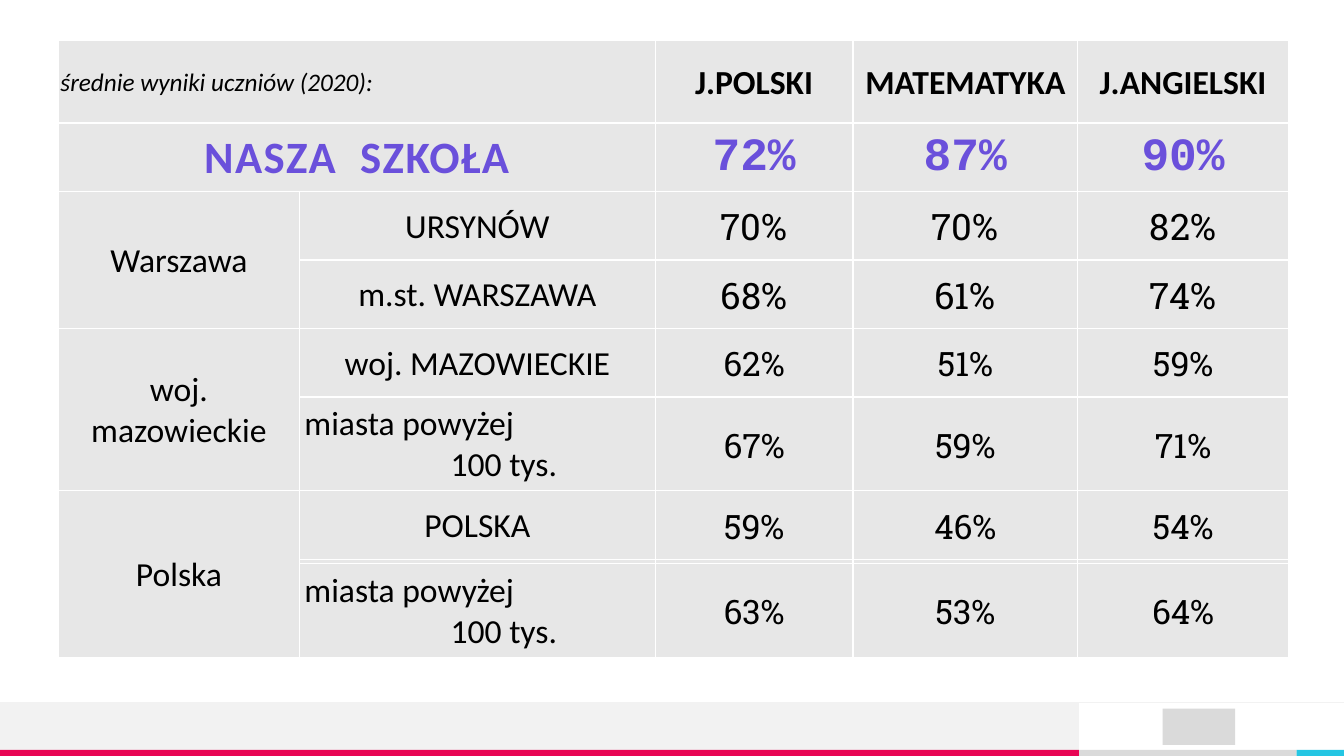
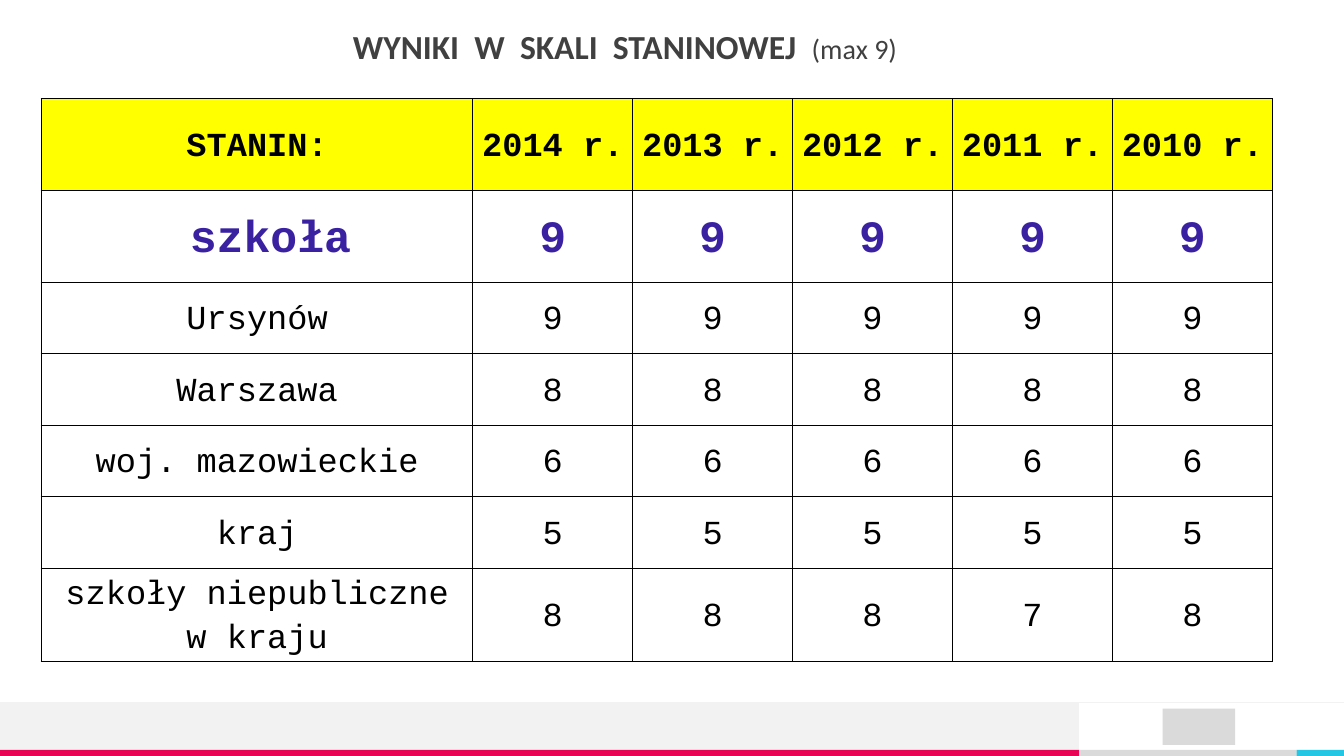
from dataclasses import dataclass

from lxml.etree import SubElement
from pptx import Presentation
from pptx.dml.color import RGBColor
from pptx.enum.shapes import MSO_CONNECTOR as CONN, MSO_SHAPE as SHAPE
from pptx.enum.text import MSO_ANCHOR as ANCHOR, PP_ALIGN as ALIGN
from pptx.oxml.ns import qn
from pptx.util import Inches, Pt


@dataclass(frozen=True)
class Style:
    size: float
    font: str = "Calibri"
    color: str = "000000"
    bold: bool = False
    italic: bool = False
    spacing: float = 0


@dataclass(frozen=True)
class Theme:
    pink: str = "E80554"
    cyan: str = "25C6E3"
    grey: str = "DADADA"
    pale: str = "F2F2F2"
    cell: str = "E7E7E7"
    white: str = "FFFFFF"
    black: str = "000000"
    yellow: str = "FFFF00"
    title: Style = Style(24, color="404040", bold=True)
    title_note: Style = Style(20, color="404040")
    caption: Style = Style(18, italic=True)
    subject: Style = Style(24, bold=True)
    label: Style = Style(24)
    city_score: Style = Style(26, "Roboto Slab")
    score: Style = Style(24, "Roboto Slab")
    school: Style = Style(32, color="6A50DB", bold=True, spacing=1)
    school_score: Style = Style(33, "Courier New", "6A50DB", True)
    stanine_head: Style = Style(24, "Courier New", bold=True)
    stanine_school: Style = Style(32, "Courier New", "3921A1", True)
    stanine: Style = Style(24, "Courier New")


THEME = Theme()
SLIDE_W, SLIDE_H = 13.33, 7.5
BAND_TOP, STRIP_TOP = 6.97, 7.44
BAND_W, CORNER_X = 10.7, 12.86


def rgb(color):
    return RGBColor.from_string(color)


def add_run(p, text, style):
    r = p.add_run()
    r.text = text
    f = r.font
    f.name, f.size = style.font, Pt(style.size)
    f.bold, f.italic = style.bold, style.italic
    f.color.rgb = rgb(style.color)
    if style.spacing:
        f._element.set("spc", str(round(style.spacing * 100)))


def add_rect(s, x, y, w, h, color):
    sp = s.shapes.add_shape(SHAPE.RECTANGLE, Inches(x), Inches(y), Inches(w), Inches(h))
    sp.shadow.inherit = False
    sp.fill.solid()
    sp.fill.fore_color.rgb = rgb(color)
    sp.line.fill.background()
    return sp


def add_rule(s, x1, x2, y, color):
    line = s.shapes.add_connector(CONN.STRAIGHT, Inches(x1), Inches(y), Inches(x2), Inches(y))
    line.line.color.rgb = rgb(color)
    line.line.width = Pt(0.5)
    SubElement(line.element.spPr, qn("a:effectLst"))
    return line


def move_footer_to_layout(s):
    strip_h = SLIDE_H - STRIP_TOP
    footer = [
        add_rect(s, BAND_W, STRIP_TOP, CORNER_X - BAND_W, strip_h, THEME.grey),
        add_rect(s, 0, BAND_TOP, BAND_W, STRIP_TOP - BAND_TOP, THEME.pale),
        add_rect(s, 11.53, 7.03, 0.72, 0.36, THEME.grey),
        add_rect(s, 0, STRIP_TOP, BAND_W, strip_h, THEME.pink),
        add_rect(s, CORNER_X, STRIP_TOP, SLIDE_W - CORNER_X, strip_h, THEME.cyan),
        add_rule(s, SLIDE_W, 0, BAND_TOP, THEME.pale),
    ]
    for sp in footer:
        s.slide_layout.shapes.element.append(sp.element)


def set_borders(cell, color):
    tc_pr = cell._tc.get_or_add_tcPr()
    for side in ("a:lnL", "a:lnR", "a:lnT", "a:lnB"):
        ln = SubElement(tc_pr, qn(side), w=str(Pt(1)))
        fill = SubElement(ln, qn("a:solidFill"))
        SubElement(fill, qn("a:srgbClr"), val=color)


def add_grid(s, x, y, cols, rows, border, margins):
    frame = s.shapes.add_table(len(rows), len(cols), Inches(x), Inches(y),
                               Inches(sum(cols)), Inches(sum(rows)))
    table = frame.table
    table.first_row = table.horz_banding = False
    for column, width in zip(table.columns, cols):
        column.width = Inches(width)
    for row, height in zip(table.rows, rows):
        row.height = Inches(height)
    for cell in table.iter_cells():
        set_borders(cell, border)
        cell.fill.background()
        cell.vertical_anchor = ANCHOR.MIDDLE
        cell.margin_left, cell.margin_top, cell.margin_right, cell.margin_bottom = map(Inches, margins)
    return table


def fill_cell(cell, color):
    cell.fill.solid()
    cell.fill.fore_color.rgb = rgb(color)


def write_cell(cell, text, style, align=ALIGN.CENTER, line_spacing=None):
    p = cell.text_frame.paragraphs[0]
    p.alignment = align
    p.line_spacing = line_spacing
    add_run(p, text, style)


def write_stepped(cell, lines, indents, style):
    tf = cell.text_frame
    for i, (text, indent) in enumerate(zip(lines, indents)):
        p = tf.add_paragraph() if i else tf.paragraphs[0]
        p.alignment = ALIGN.LEFT
        p._p.get_or_add_pPr().set("marL", str(Inches(indent)))
        add_run(p, text, style)


def shrink_empty(cell):
    cell.margin_top = cell.margin_bottom = 0
    SubElement(cell.text_frame.paragraphs[0]._p, qn("a:endParaRPr"), sz="100")


def add_results(s):
    big_cities = ("miasta powyżej", "100 tys.")
    rows = [
        ("URSYNÓW", THEME.city_score, "70%", "70%", "82%"),
        ("m.st. WARSZAWA", THEME.city_score, "68%", "61%", "74%"),
        ("woj. MAZOWIECKIE", THEME.score, "62%", "51%", "59%"),
        (big_cities, THEME.score, "67%", "59%", "71%"),
        ("POLSKA", THEME.score, "59%", "46%", "54%"),
        None,
        (big_cities, THEME.score, "63%", "53%", "64%"),
    ]
    groups = [("Warszawa", 2, 3), ("woj. mazowieckie", 4, 5), ("Polska", 6, 8)]
    heads = [
        ("średnie wyniki uczniów (2020):", THEME.caption, ALIGN.LEFT,
         ("J.POLSKI", "MATEMATYKA", "J.ANGIELSKI"), THEME.subject),
        ("NASZA  SZKOŁA", THEME.school, ALIGN.CENTER,
         ("72%", "87%", "90%"), THEME.school_score),
    ]
    heights = [0.82, 0.68, 0.68, 0.68, 0.68, 0.93, 0.68, 0.04, 0.93]
    table = add_grid(s, 0.58, 0.4, [2.39, 3.53, 1.96, 2.23, 2.09], heights,
                     THEME.white, (0.02, 0.02, 0.02, 0))
    for cell in table.iter_cells():
        fill_cell(cell, THEME.cell)
    for i, (name, style, align, values, value_style) in enumerate(heads):
        table.cell(i, 0).merge(table.cell(i, 1))
        write_cell(table.cell(i, 0), name, style, align)
        for j, value in enumerate(values, 2):
            write_cell(table.cell(i, j), value, value_style)
    for name, first, last in groups:
        table.cell(first, 0).merge(table.cell(last, 0))
        write_cell(table.cell(first, 0), name, THEME.label)
    for i, row in enumerate(rows, len(heads)):
        if row is None:
            for j in range(len(table.columns)):
                shrink_empty(table.cell(i, j))
            continue
        label, score_style, *values = row
        if label is big_cities:
            write_stepped(table.cell(i, 1), label, (0.03, 1.48), THEME.label)
        else:
            write_cell(table.cell(i, 1), label, THEME.label)
        for j, value in enumerate(values, 2):
            write_cell(table.cell(i, j), value, score_style)


def add_stanines(s):
    years = [f"{year} r." for year in range(2014, 2009, -1)]
    rows = [
        ("STANIN:", years),
        (" szkoła", "99999"),
        ("Ursynów", "99999"),
        ("Warszawa", "88888"),
        ("woj. mazowieckie", "66666"),
        ("kraj", "55555"),
        ("szkoły niepubliczne w kraju", "88878"),
    ]
    styles = [THEME.stanine_head, THEME.stanine_school] + [THEME.stanine] * 5
    table_w, name_w = 12.21, 4.28
    year_w = (table_w - name_w) / len(years)
    table = add_grid(s, 0.41, 0.98, [name_w] + [year_w] * len(years),
                     [0.91] * 2 + [0.71] * 5, THEME.black, (0.05, 0, 0.05, 0))
    for i, ((name, values), style) in enumerate(zip(rows, styles)):
        for j, text in enumerate([name, *values]):
            write_cell(table.cell(i, j), text, style, line_spacing=1.15)
            if i == 0:
                fill_cell(table.cell(i, j), THEME.yellow)


def add_title(s, text, note):
    sp = s.shapes.add_textbox(Inches(3.5), Inches(0.3), Inches(6.91), Inches(0.39))
    tf = sp.text_frame
    tf.word_wrap = True
    tf.margin_left = tf.margin_top = tf.margin_right = tf.margin_bottom = 0
    p = tf.paragraphs[0]
    p.line_spacing = 0.9
    add_run(p, text, THEME.title)
    add_run(p, note, THEME.title_note)


def main():
    prs = Presentation()
    prs.slide_width, prs.slide_height = Inches(SLIDE_W), Inches(SLIDE_H)
    blank = prs.slide_layouts[6]

    s = prs.slides.add_slide(blank)
    move_footer_to_layout(s)
    add_results(s)

    s = prs.slides.add_slide(blank)
    add_title(s, "WYNIKI  W  SKALI  STANINOWEJ  ", "(max 9)")
    add_stanines(s)

    prs.save("out.pptx")


if __name__ == "__main__":
    main()
